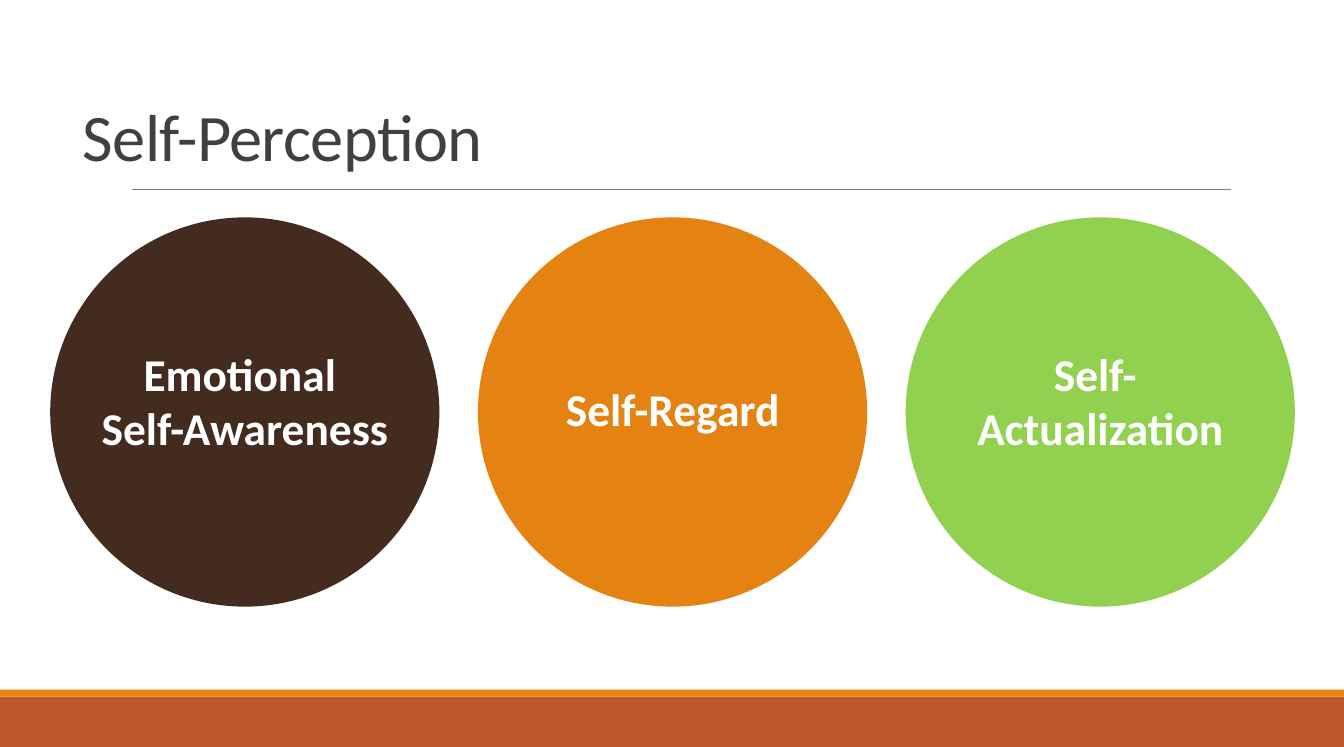
import pptx
import pptx.util
import pptx.dml.color
import pptx.enum.shapes
import pptx.enum.text
import lxml.etree

Inches = pptx.util.Inches
Pt = pptx.util.Pt
SHAPE = pptx.enum.shapes.MSO_SHAPE
ALIGN = pptx.enum.text.PP_ALIGN
ANCHOR = pptx.enum.text.MSO_ANCHOR
FIT = pptx.enum.text.MSO_AUTO_SIZE

WIDE, HIGH = 11.5, 6.39
HUES = {
    "rust": "BD582C",
    "orange": "E48312",
    "brown": "432B20",
    "green": "92D050",
    "rule": "808080",
    "title": "404040",
    "white": "FFFFFF",
}
# Colour, lines, label width, label drop below circle top, label height
TRAITS = [
    ("brown", ["Emotional ", "Self-Awareness"], 2.7, 1.05, 1.04),
    ("orange", ["Self-Regard"], 2.06, 1.35, 0.57),
    ("green", ["Self- ", "Actualization"], 2.34, 1.05, 1.04),
]


def tint(name):
    return pptx.dml.color.RGBColor.from_string(HUES[name])


def add_form(slide, kind, box, hue):
    form = slide.shapes.add_shape(kind, *map(Inches, box))
    form.shadow.inherit = False
    form.fill.solid()
    form.fill.fore_color.rgb = tint(hue)
    form.line.fill.background()


def add_text(slide, box, lines, size, hue, bold=False, align=ALIGN.LEFT,
             anchor=ANCHOR.TOP, wrap=True, fit=FIT.NONE, lead=None, track=None):
    frame = slide.shapes.add_textbox(*map(Inches, box)).text_frame
    frame.word_wrap = wrap
    frame.auto_size = fit
    frame.vertical_anchor = anchor
    for spot, line in enumerate(lines):
        para = frame.add_paragraph() if spot else frame.paragraphs[0]
        para.alignment = align
        if lead:
            para.line_spacing = lead
        run = para.add_run()
        run.text = line
        run.font.name = "Calibri"
        run.font.size = Pt(size)
        run.font.bold = bold
        run.font.color.rgb = tint(hue)
        if track:
            run.font._element.set("spc", str(round(track * 100)))


def add_foot(slide, left, top, width, height):
    edge = 0.06
    add_form(slide, SHAPE.RECTANGLE, (left, top + edge, width, height - edge), "rust")
    add_form(slide, SHAPE.RECTANGLE, (left, top, width, edge), "orange")


def add_head(slide, left, top, width, height):
    # Thin rule under the title
    start, level = left + 0.52, top + height + 0.07
    rule = slide.shapes.add_connector(
        pptx.enum.shapes.MSO_CONNECTOR.STRAIGHT,
        Inches(start), Inches(level), Inches(start + 9.4), Inches(level))
    rule.line.color.rgb = tint("rule")
    rule.line.width = Pt(0.5)
    lxml.etree.SubElement(rule._element.spPr, pptx.oxml.ns.qn("a:effectLst"))

    add_text(slide, (left, top, width, height), ["Self-Perception"], 40.9, "title",
             anchor=ANCHOR.BOTTOM, lead=0.85, track=-0.4)


def add_traits(slide, left, top, width, size):
    step = (width - size) / (len(TRAITS) - 1)
    for spot, (hue, lines, span, drop, tall) in enumerate(TRAITS):
        edge = left + spot * step
        add_form(slide, SHAPE.OVAL, (edge, top, size, size), hue)
        add_text(slide, (edge + (size - span) / 2, top + drop, span, tall), lines,
                 28, "white", bold=True, align=ALIGN.CENTER, wrap=False,
                 fit=FIT.SHAPE_TO_FIT_TEXT)


def main():
    deck = pptx.Presentation()
    deck.slide_width = Inches(WIDE)
    deck.slide_height = Inches(HIGH)
    slide = deck.slides.add_slide(deck.slide_layouts[6])
    add_foot(slide, 0, 5.9, WIDE, HIGH - 5.9)
    add_head(slide, 0.61, 0.3, 12.09, 1.25)
    add_traits(slide, 0.43, 1.86, 10.65, 3.33)
    deck.save("out.pptx")


if __name__ == "__main__":
    main()
